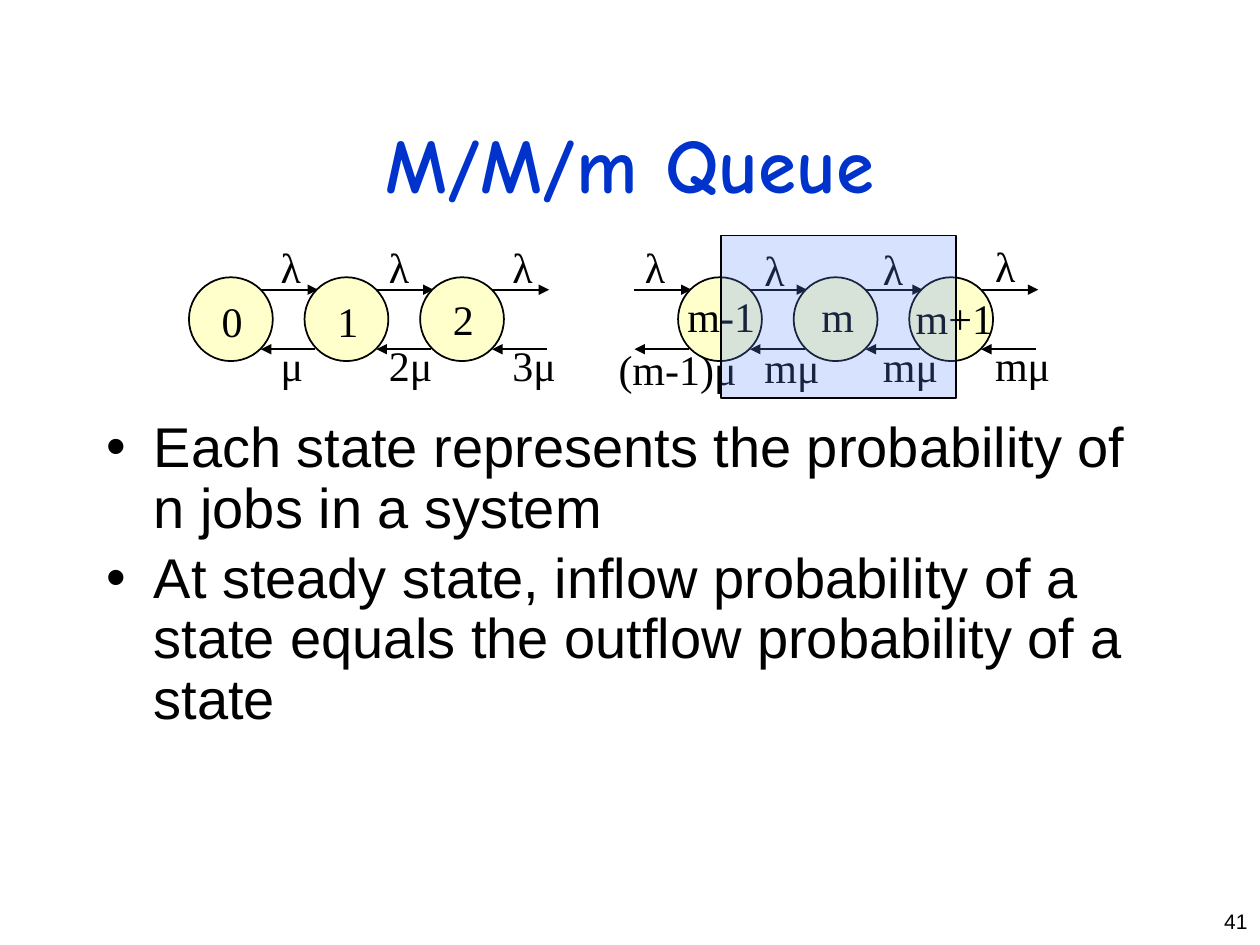
import pptx
import pptx.dml.color
import pptx.enum.shapes
import pptx.enum.text
import pptx.oxml.ns
import pptx.oxml.xmlchemy
import pptx.util
from pptx.util import Cm

HUES = {"ink": "000000", "title": "0033CC", "state": "FFFFCC", "focus": "618FFD"}
SERIF, SANS, HEAD = "Times New Roman", "Arial", "Comic Neue"
ALIGN = pptx.enum.text.PP_ALIGN
SHAPE = pptx.enum.shapes.MSO_SHAPE

STEP, SIZE = 2.33, 1.69      # pitch and diameter of the state circles
TOP, FLOW, BACK = 5.59, 5.84, 7.04
LOW, HIGH = 3.81, 13.67      # left edge of each chain

# text, chain start, place in chain, shift from circle, top, width
STATES = [
    ("0", LOW, 0, 0.41, 5.84, 0.94),
    ("1", LOW, 1, 0.41, 5.84, 0.94),
    ("2", LOW, 2, 0.41, 5.79, 0.94),
    ("m-1", HIGH, 0, -0.06, 5.74, 1.88),
    ("m", HIGH, 1, 0.31, 5.74, 1.17),
    ("m+1", HIGH, 2, -0.12, 5.77, 2.08),
]
# rate, left of λ, top of λ, left of rate, top of rate, width of rate
RATES = [
    ("μ", 5.41, 4.75, 5.41, 6.71, 1.02),
    ("2μ", 7.59, 4.75, 7.59, 6.71, 1.42),
    ("3μ", 10.08, 4.75, 10.08, 6.71, 1.42),
    ("(m-1)μ", 12.75, 4.75, 12.22, 6.81, 2.95),
    ("mμ", 15.16, 4.8, 15.16, 6.76, 1.68),
    ("mμ", 17.55, 4.78, 17.55, 6.73, 1.68),
    ("mμ", 19.81, 4.72, 19.81, 6.71, 1.68),
]
POINTS = [
    "Each state represents the probability of n jobs in a system",
    "At steady state, inflow probability of a state equals the outflow probability of a state",
]


def tint(name):
    return pptx.dml.color.RGBColor.from_string(HUES[name])


def append(node, tag, **attrs):
    child = pptx.oxml.xmlchemy.OxmlElement(tag)
    for key, value in attrs.items():
        child.set(key, value)
    node.append(child)


class Board:
    def __init__(self, slide):
        self.slide = slide

    def text(self, lines, x, y, w, h, size=24, font=SERIF, hue="ink",
             bold=False, align=ALIGN.LEFT, wrap=False):
        box = self.slide.shapes.add_textbox(Cm(x), Cm(y), Cm(w), Cm(h))
        frame = box.text_frame
        frame.text = lines
        frame.word_wrap = wrap
        for para in frame.paragraphs:
            para.alignment = align
            for run in para.runs:
                run.font.size = pptx.util.Pt(size)
                run.font.name = font
                run.font.bold = bold
                run.font.color.rgb = tint(hue)
        return frame

    def bullets(self, points, x, y, w, h):
        frame = self.text("\n".join(points), x, y, w, h, 32, SANS, wrap=True)
        for para in frame.paragraphs:
            para.line_spacing = 0.9
            para.space_before = pptx.util.Pt(5.5)
            props = para._p.get_or_add_pPr()
            props.set("marL", str(Cm(0.95)))
            props.set("indent", str(-Cm(0.95)))
            append(props, "a:buFont", typeface=SANS)
            append(props, "a:buChar", char="•")

    def shape(self, kind, x, y, w, h, hue, alpha=None):
        shape = self.slide.shapes.add_shape(kind, Cm(x), Cm(y), Cm(w), Cm(h))
        shape.shadow.inherit = False
        shape.fill.solid()
        shape.fill.fore_color.rgb = tint(hue)
        shape.line.color.rgb = tint("ink")
        shape.line.width = pptx.util.Pt(1)
        if alpha:
            color = shape._element.spPr.find(".//" + pptx.oxml.ns.qn("a:srgbClr"))
            append(color, "a:alpha", val=str(alpha * 1000))

    def arrow(self, start, end, y):
        line = self.slide.shapes.add_connector(
            pptx.enum.shapes.MSO_CONNECTOR.STRAIGHT, Cm(start), Cm(y), Cm(end), Cm(y))
        line.line.color.rgb = tint("ink")
        line.line.width = pptx.util.Pt(1)
        props = line._element.spPr
        append(props.get_or_add_ln(), "a:tailEnd", type="triangle")
        append(props, "a:effectLst")

    def links(self, x):
        """Draw the arrow pair to the right of the circle whose left edge is x."""
        self.arrow(x + 1.45, x + 2.6, FLOW)
        self.arrow(x + 2.55, x + 1.45, BACK)


def main():
    deck = pptx.Presentation()
    deck.slide_width, deck.slide_height = Cm(25.4), Cm(19.05)
    board = Board(deck.slides.add_slide(deck.slide_layouts[6]))

    title = board.text("M/M/m Queue", 1.9, 1.7, 21.6, 3.18, 44, HEAD, "title",
                       True, ALIGN.CENTER, True)
    title.vertical_anchor = pptx.enum.text.MSO_ANCHOR.MIDDLE
    board.bullets(POINTS, 1.9, 8.33, 21.6, 8.6)
    board.text("41", 23.5, 18.2, 1.9, 0.85, 12, SANS, align=ALIGN.RIGHT, wrap=True)

    for name, chain, place, shift, y, w in STATES:
        x = chain + place * STEP
        board.shape(SHAPE.OVAL, x, TOP, SIZE, SIZE, "state")
        board.links(x)
        board.text(name, x + shift, y, w, 1.27)
    board.links(HIGH - STEP)

    for rate, x, y, left, top, w in RATES:
        board.text("λ", x, y, 0.99, 1.27)
        board.text(rate, left, top, w, 1.27)

    board.shape(SHAPE.RECTANGLE, 14.53, 4.75, 4.75, 3.28, "focus", 25)
    deck.save("out.pptx")


if __name__ == "__main__":
    main()
